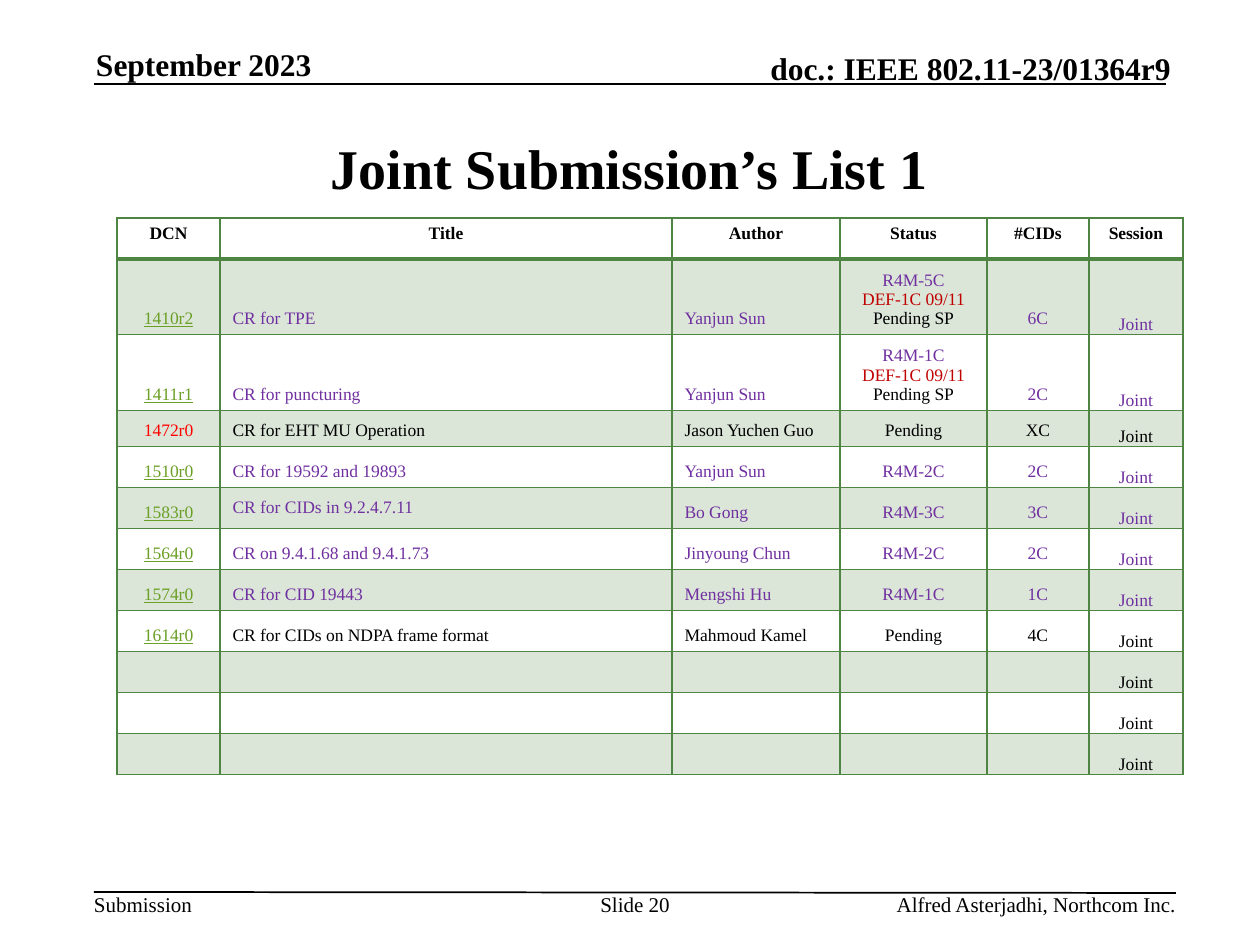
from lxml import etree
from pptx import Presentation
from pptx.dml.color import RGBColor
from pptx.enum.shapes import MSO_CONNECTOR
from pptx.enum.text import MSO_ANCHOR, PP_ALIGN
from pptx.oxml.ns import qn
from pptx.util import Pt

PX = 914400 / 126
LEFT, CENTER, RIGHT = PP_ALIGN.LEFT, PP_ALIGN.CENTER, PP_ALIGN.RIGHT
TOP, MIDDLE, BOTTOM = MSO_ANCHOR.TOP, MSO_ANCHOR.MIDDLE, MSO_ANCHOR.BOTTOM
STRAIGHT = MSO_CONNECTOR.STRAIGHT

THEME = {
    "font": "Times New Roman",
    "black": "000000", "purple": "7030A0", "crimson": "C00000",
    "red": "FF0000", "link": "6B9F25", "green": "4E8542",
    "title": 32, "header": 18, "footer": 12, "cell": 10,
}


def px(value):
    return round(value * PX)


def write(frame, text, size="cell", colors=("black",), bold=False, underline=False, align=LEFT):
    for index, line in enumerate(text.split("\n")):
        paragraph = frame.paragraphs[0] if index == 0 else frame.add_paragraph()
        paragraph.alignment = align
        if not line:
            paragraph._p.get_or_add_endParaRPr().set("sz", str(THEME[size] * 100))
            continue
        run = paragraph.add_run()
        run.text = line
        run.font.name = THEME["font"]
        run.font.size = Pt(THEME[size])
        run.font.bold = bold
        run.font.underline = underline
        run.font.color.rgb = RGBColor.from_string(THEME[colors[index]])


presentation = Presentation()
presentation.slide_width, presentation.slide_height = px(1260), px(945)
slide = presentation.slides.add_slide(presentation.slide_layouts[6])

for x1, y1, x2, y2 in [(94, 84, 1166, 84), (94, 892, 1176, 893)]:
    rule = slide.shapes.add_connector(STRAIGHT, px(x1), px(y1), px(x2), px(y2))
    rule.line.color.rgb = RGBColor.from_string(THEME["black"])
    rule.line.width = Pt(1)
    etree.SubElement(rule._element.spPr, qn("a:effectLst"))

labels = [
    ("Submission", 94, 892, 98, 25, "footer", False, LEFT, TOP),
    ("doc.: IEEE 802.11-23/01364r9", 689, 49, 482, 38, "header", True, RIGHT, BOTTOM),
    ("Joint Submission’s List 1", 94, 94, 1071, 147, "title", True, CENTER, MIDDLE),
    ("September 2023", 96, 45, 258, 38, "header", True, LEFT, BOTTOM),
    ("Alfred Asterjadhi, Northcom Inc.", 738, 892, 438, 25, "footer", False, RIGHT, TOP),
    ("Slide 20", 598, 892, 74, 50, "footer", False, CENTER, TOP),
]
for text, left, top, width, height, size, bold, align, anchor in labels:
    box = slide.shapes.add_textbox(px(left), px(top), px(width), px(height))
    frame = box.text_frame
    frame.margin_left = frame.margin_right = frame.margin_top = frame.margin_bottom = 0
    frame.vertical_anchor = anchor
    frame.word_wrap = text != "Submission"
    write(frame, text, size=size, bold=bold, align=align)

headings = ("DCN", "Title", "Author", "Status", "#CIDs", "Session")
submissions = [
    ("1410r2", "CR for TPE", "Yanjun Sun", "R4M-5C\nDEF-1C 09/11\nPending SP", "6C"),
    ("1411r1", "CR for puncturing", "Yanjun Sun", "R4M-1C\nDEF-1C 09/11\nPending SP", "2C"),
    ("1472r0", "CR for EHT MU Operation", "Jason Yuchen Guo", "Pending", "XC"),
    ("1510r0", "CR for 19592 and 19893", "Yanjun Sun", "R4M-2C", "2C"),
    ("1583r0", "CR for CIDs in 9.2.4.7.11", "Bo Gong", "R4M-3C", "3C"),
    ("1564r0", "CR on 9.4.1.68 and 9.4.1.73", "Jinyoung Chun", "R4M-2C", "2C"),
    ("1574r0", "CR for CID 19443", "Mengshi Hu", "R4M-1C", "1C"),
    ("1614r0", "CR for CIDs on NDPA frame format", "Mahmoud Kamel", "Pending", "4C"),
] + [("",) * 5] * 3
rows = [headings] + [submission + ("Joint",) for submission in submissions]
column_widths = (103, 452, 168, 147, 102, 94)
row_heights = (41, 70, 70, 36) + (41,) * 8
status_colors = {"R4M": "purple", "DEF": "crimson"}

table = slide.shapes.add_table(
    len(rows), len(headings), px(117), px(218), px(sum(column_widths)), px(sum(row_heights))
).table
table.first_row = table.horz_banding = False
for column, width in zip(table.columns, column_widths):
    column.width = px(width)

for row_index, (values, height) in enumerate(zip(rows, row_heights)):
    table.rows[row_index].height = px(height)
    is_heading = row_index == 0
    line_colors = [status_colors.get(line[:3], "black") for line in values[3].split("\n")]
    for heading, text, cell in zip(headings, values, table.rows[row_index].cells):
        cell_properties = cell._tc.get_or_add_tcPr()
        for side in ("lnL", "lnR", "lnT", "lnB"):
            is_thick = (row_index, side) in ((0, "lnB"), (1, "lnT"))
            border = etree.SubElement(cell_properties, qn(f"a:{side}"), w=str(Pt(2 if is_thick else 1)))
            border_fill = etree.SubElement(border, qn("a:solidFill"))
            etree.SubElement(border_fill, qn("a:srgbClr"), val=THEME["green"])
        if row_index % 2:
            cell.fill.solid()
            cell.fill.fore_color.rgb = RGBColor.from_string(THEME["green"])
            tint = cell_properties.find(qn("a:solidFill")).find(qn("a:srgbClr"))
            etree.SubElement(tint, qn("a:alpha"), val="20000")
        else:
            cell.fill.background()

        cell.vertical_anchor = TOP if is_heading else BOTTOM
        if text == "CR for CIDs in 9.2.4.7.11":
            cell.vertical_anchor = MIDDLE
        if heading == "Session" and not is_heading:
            cell.margin_left = cell.margin_right = cell.margin_top = cell.margin_bottom = 0

        is_link = heading == "DCN" and not is_heading and text != "1472r0"
        colors = line_colors if heading == "Status" else line_colors[:1]
        if heading == "DCN" and not is_heading:
            colors = ["link" if is_link else "red"]
        is_left = heading in ("Title", "Author") and not is_heading
        write(cell.text_frame, text, colors=colors, bold=is_heading,
              underline=is_link, align=LEFT if is_left else CENTER)

presentation.save("out.pptx")
